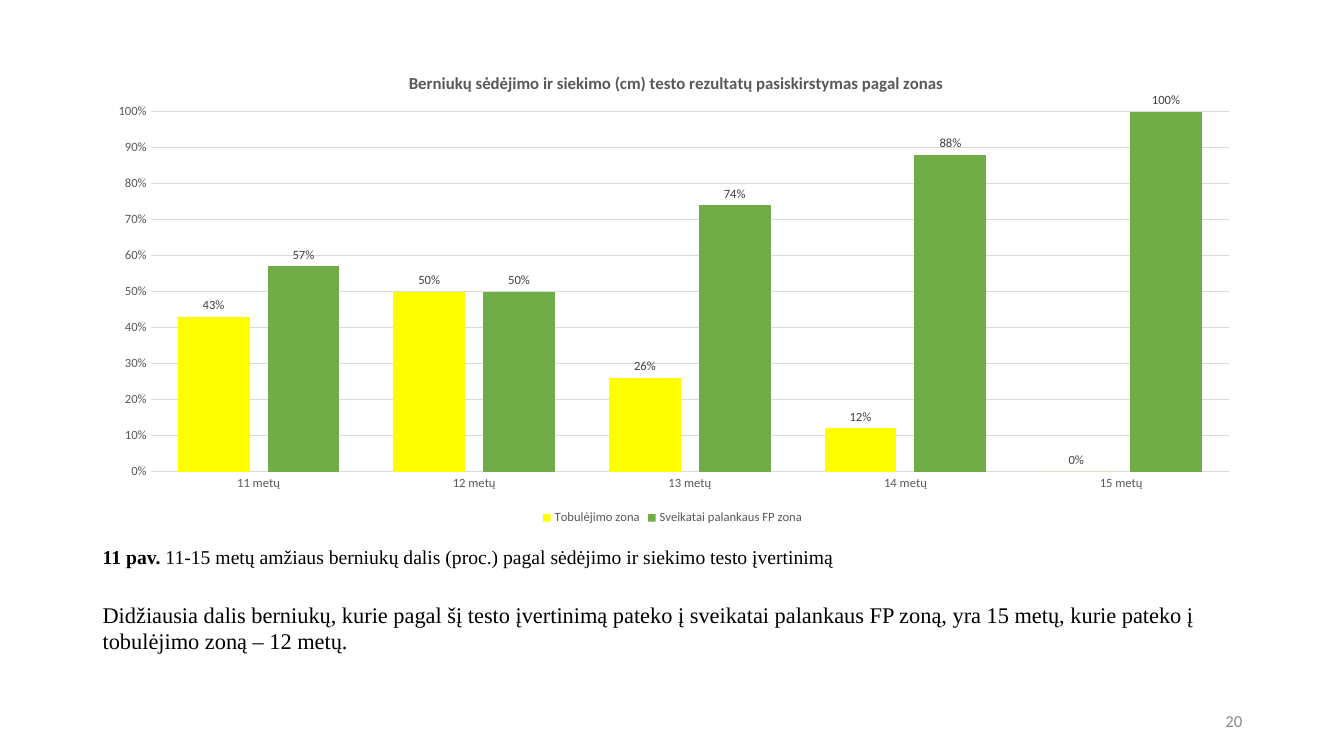
from dataclasses import dataclass

from lxml.etree import SubElement
from pptx import Presentation
from pptx.chart.data import CategoryChartData
from pptx.dml.color import RGBColor
from pptx.enum.chart import XL_CHART_TYPE as ChartType
from pptx.enum.chart import XL_LABEL_POSITION as LabelPosition
from pptx.enum.chart import XL_LEGEND_POSITION as LegendPosition
from pptx.enum.chart import XL_TICK_MARK as TickMark
from pptx.enum.text import MSO_ANCHOR as Anchor
from pptx.enum.text import PP_ALIGN as Align
from pptx.oxml.ns import qn
from pptx.util import Inches, Pt

LEFT, WIDTH = 0.92, 11.5
SERIF, SANS = "Times New Roman", "Calibri"
BLACK, GREY, LABEL_GREY, GRID_GREY = "000000", "595959", "404040", "D9D9D9"
AGES = [f"{age} metų" for age in range(11, 16)]
CHART_TITLE = "Berniukų sėdėjimo ir siekimo (cm) testo rezultatų pasiskirstymas pagal zonas"


@dataclass
class Zone:
    name: str
    shares: list[float]
    color: str


@dataclass
class Span:
    text: str
    bold: bool = False


ZONES = [
    Zone("Tobulėjimo zona", [0.43, 0.5, 0.26, 0.12, 0], "FFFF00"),
    Zone("Sveikatai palankaus FP zona", [0.57, 0.5, 0.74, 0.88, 1], "70AD47"),
]


def rgb(color: str) -> RGBColor:
    return RGBColor.from_string(color)


def style_font(font, size: float, color: str, name: str = SANS, bold: bool = False) -> None:
    font.size, font.name, font.bold = Pt(size), name, bold
    font.color.rgb = rgb(color)


def add_text(page, spans: list[Span], *, left: float = LEFT, top: float, width: float = WIDTH,
             height: float, size: float, font: str = SERIF, color: str = BLACK,
             anchor=Anchor.TOP, align=Align.LEFT, spacing: float = 1.0) -> None:
    box = page.shapes.add_textbox(Inches(left), Inches(top), Inches(width), Inches(height))
    frame = box.text_frame
    frame.word_wrap, frame.vertical_anchor = True, anchor
    para = frame.paragraphs[0]
    para.alignment, para.line_spacing = align, spacing
    for span in spans:
        run = para.add_run()
        run.text = span.text
        style_font(run.font, size, color, font, span.bold)


def set_layout(element, **settings) -> None:
    """Give a chart title or plot area a manual layout in fractions of the chart."""
    layout = element.find(qn("c:layout"))
    if layout is None:
        layout = SubElement(element, qn("c:layout"))
        text = element.find(qn("c:tx"))
        element.remove(layout)
        if text is None:
            element.insert(0, layout)
        else:
            text.addnext(layout)
    manual = SubElement(layout, qn("c:manualLayout"))
    for tag, value in settings.items():
        SubElement(manual, qn(f"c:{tag}")).set("val", str(value))


def style_axis(axis) -> None:
    axis.major_tick_mark = axis.minor_tick_mark = TickMark.NONE
    style_font(axis.tick_labels.font, 9, GREY)


def style_line(line) -> None:
    line.color.rgb, line.width = rgb(GRID_GREY), Pt(0.75)


def add_zone_chart(page) -> None:
    data = CategoryChartData(number_format="0%")
    data.categories = AGES
    for zone in ZONES:
        data.add_series(zone.name, zone.shares)
    chart = page.shapes.add_chart(ChartType.COLUMN_CLUSTERED, Inches(LEFT), Inches(0.49),
                                  Inches(WIDTH), Inches(4.76), data).chart
    style_font(chart.font, 10, BLACK)

    chart.has_title = True
    title = chart.chart_title
    title.include_in_layout = False
    title.text_frame.text = CHART_TITLE
    style_font(title.text_frame.paragraphs[0].runs[0].font, 12, GREY, bold=True)

    chart.has_legend = True
    chart.legend.position = LegendPosition.BOTTOM
    chart.legend.include_in_layout = False
    style_font(chart.legend.font, 9, GREY)

    ages, shares = chart.category_axis, chart.value_axis
    style_axis(ages)
    style_axis(shares)
    style_line(ages.format.line)
    shares.format.line.fill.background()
    shares.minimum_scale, shares.maximum_scale, shares.major_unit = 0, 1, 0.1
    shares.tick_labels.number_format = "0%"
    shares.tick_labels.number_format_is_linked = False
    style_line(shares.major_gridlines.format.line)

    plot = chart.plots[0]
    plot.gap_width, plot.overlap, plot.vary_by_categories = 75, -25, False
    for series, zone in zip(plot.series, ZONES):
        series.format.fill.solid()
        series.format.fill.fore_color.rgb = rgb(zone.color)
        series.invert_if_negative = False
        labels = series.data_labels
        labels.show_value, labels.position = True, LabelPosition.OUTSIDE_END
        labels.number_format, labels.number_format_is_linked = "0%", False
        style_font(labels.font, 9, LABEL_GREY)

    plot_area = chart.element.find(".//" + qn("c:plotArea"))
    set_layout(title.element if hasattr(title, "element") else chart.element.find(".//" + qn("c:title")),
               xMode="edge", yMode="edge", x=0.27, y=0.04)
    set_layout(plot_area, layoutTarget="inner", xMode="edge", yMode="edge",
               x=0.05, y=0.13, w=0.93, h=0.75)


def main() -> None:
    deck = Presentation()
    deck.slide_width, deck.slide_height = Inches(13.33), Inches(7.5)
    page = deck.slides.add_slide(deck.slide_layouts[6])

    add_zone_chart(page)
    add_text(page, [Span("11 pav. ", bold=True),
                    Span("11-15 metų amžiaus berniukų dalis (proc.) pagal sėdėjimo ir siekimo testo įvertinimą")],
             top=5.36, height=0.36, size=14, anchor=Anchor.MIDDLE, spacing=0.9)
    add_text(page, [Span("Didžiausia dalis berniukų, kurie pagal šį testo įvertinimą pateko į sveikatai "
                         "palankaus FP zoną, yra 15 metų, kurie pateko į tobulėjimo zoną – 12 metų.")],
             top=5.91, height=0.64, size=16)
    add_text(page, [Span("20")], left=9.42, top=6.95, width=3, height=0.4, size=12,
             font=SANS, color="8C8C8C", anchor=Anchor.MIDDLE, align=Align.RIGHT)
    deck.save("out.pptx")


if __name__ == "__main__":
    main()
